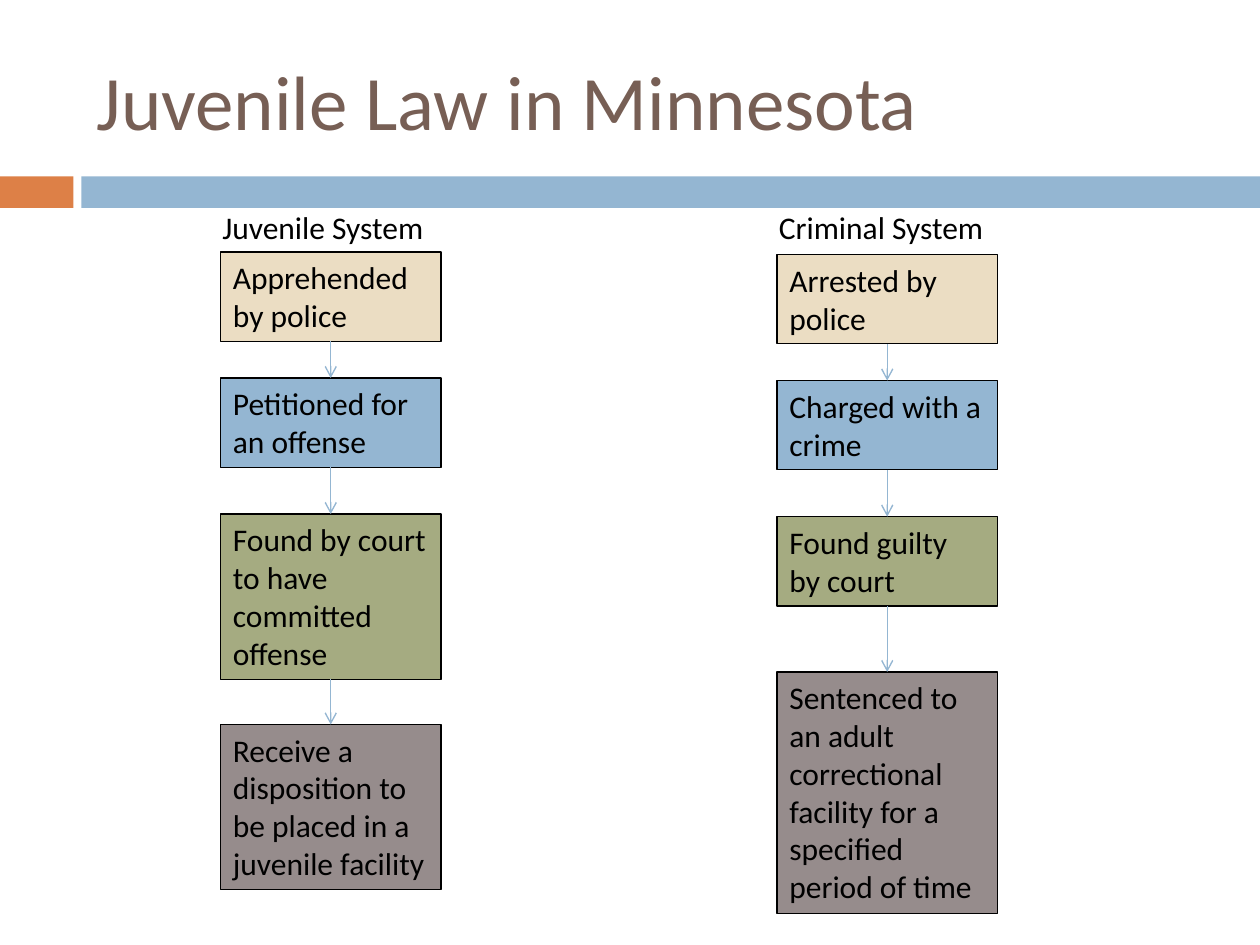
"""Build a slide that sets the juvenile and criminal systems side by side."""
from lxml import etree
from pptx import Presentation
from pptx.dml.color import RGBColor
from pptx.enum import shapes, text
from pptx.oxml import ns
from pptx.util import Pt

COLORS = {
    "title": "775F55", "text": "000000", "accent": "DD8047", "band": "94B6D2",
    "contact": "EBDDC3", "charge": "94B6D2", "finding": "A5AB81",
    "outcome": "968C8C", "arrow": "94B6D2", "outline": "000000",
}
STAGES = ("contact", "charge", "finding", "outcome")
BOX_WIDTH = 126
SYSTEMS = (
    ("Juvenile System", 126, (
        ("Apprehended by police", 144, 51),
        ("Petitioned for an offense", 216, 51),
        ("Found by court to have committed offense", 293.75, 94.5),
        ("Receive a disposition to be placed in a juvenile facility", 414, 94.5),
    )),
    ("Criminal System", 444, (
        ("Arrested by police", 145.5, 51),
        ("Charged with a crime", 217.5, 51),
        ("Found guilty by court", 295.25, 51),
        ("Sentenced to an adult correctional facility for a specified period of time",
         384, 138),
    )),
)


def color(name):
    """Return the named color."""
    return RGBColor.from_string(COLORS[name])


def apply(target, values):
    """Set each attribute in values on the target."""
    for name, value in values.items():
        setattr(target, name, value)


def write(shape, words, size=18, ink="text", anchor=text.MSO_ANCHOR.TOP):
    """Put left-aligned words in a shape."""
    apply(shape.text_frame, {"word_wrap": True, "vertical_anchor": anchor})
    para = shape.text_frame.paragraphs[0]
    para.alignment = text.PP_ALIGN.LEFT
    span = para.add_run()
    span.text = words
    apply(span.font, {"name": "Calibri", "size": Pt(size)})
    span.font.color.rgb = color(ink)


def add_bar(page, left, top, width, height, fill):
    """Add a plain filled rectangle."""
    bar = page.shapes.add_shape(shapes.MSO_SHAPE.RECTANGLE,
                                *map(Pt, (left, top, width, height)))
    bar.shadow.inherit = False
    bar.fill.solid()
    bar.fill.fore_color.rgb = color(fill)
    bar.line.fill.background()
    return bar


def add_step(page, left, top, height, words, fill):
    """Add an outlined box that holds one step."""
    box = add_bar(page, left, top, BOX_WIDTH, height, fill)
    box.line.color.rgb = color("outline")
    box.line.width = Pt(0.75)
    write(box, words)


def add_arrow(page, x, start, end):
    """Add a downward arrow between two steps."""
    arrow = page.shapes.add_connector(shapes.MSO_CONNECTOR.STRAIGHT,
                                      *map(Pt, (x, start, x, end)))
    arrow.line.color.rgb = color("arrow")
    arrow.line.width = Pt(0.79)
    outline = arrow.line._get_or_add_ln()
    etree.SubElement(outline, ns.qn("a:tailEnd"), type="arrow")
    etree.SubElement(arrow._element.spPr, ns.qn("a:effectLst"))


def add_heading(page, left, words):
    """Add the heading above one system."""
    box = page.shapes.add_textbox(*map(Pt, (left - 6, 115.5, BOX_WIDTH + 12, 29)))
    write(box, words)


def add_system(page, heading, left, steps):
    """Add one column of steps joined by arrows."""
    add_heading(page, left, heading)
    for stage, (words, top, height) in zip(STAGES, steps):
        add_step(page, left, top, height, words, stage)
    for (_, top, height), (_, following, _) in zip(steps, steps[1:]):
        add_arrow(page, left + BOX_WIDTH / 2, top + height, following)


def add_title(page, words):
    """Place and format the title."""
    title = page.shapes.title
    apply(title, {"left": Pt(48), "top": Pt(18), "width": Pt(642), "height": Pt(78)})
    write(title, words, 44, "title", text.MSO_ANCHOR.MIDDLE)


def main():
    """Build and save the slide."""
    deck = Presentation()
    apply(deck, {"slide_width": Pt(720), "slide_height": Pt(540)})
    page = deck.slides.add_slide(deck.slide_layouts[5])
    add_bar(page, 0, 100.8, 42, 18, "accent")
    add_bar(page, 46.5, 100.8, 673.5, 18, "band")
    add_title(page, "Juvenile Law in Minnesota")
    for system in SYSTEMS:
        add_system(page, *system)
    deck.save("out.pptx")


if __name__ == "__main__":
    main()
